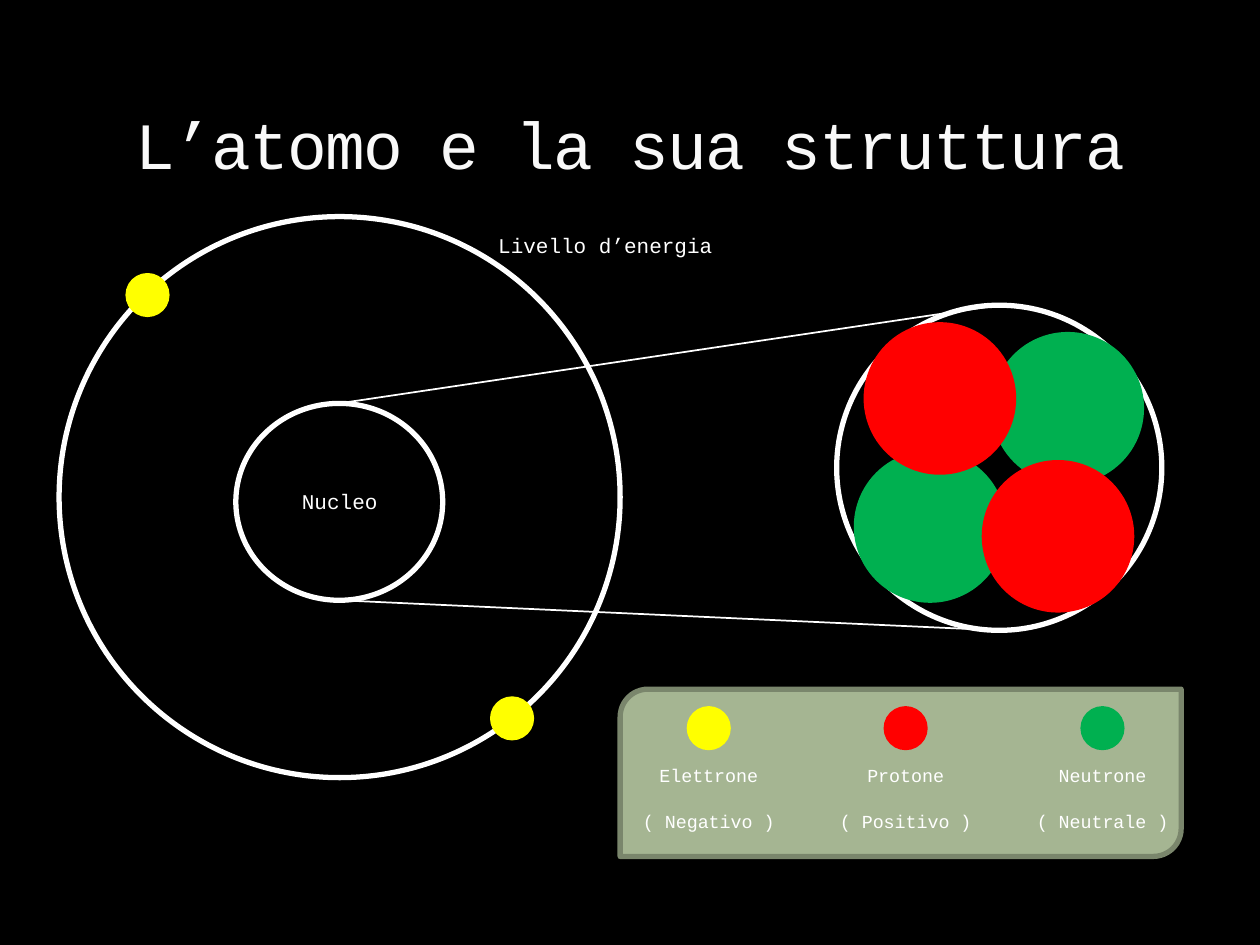
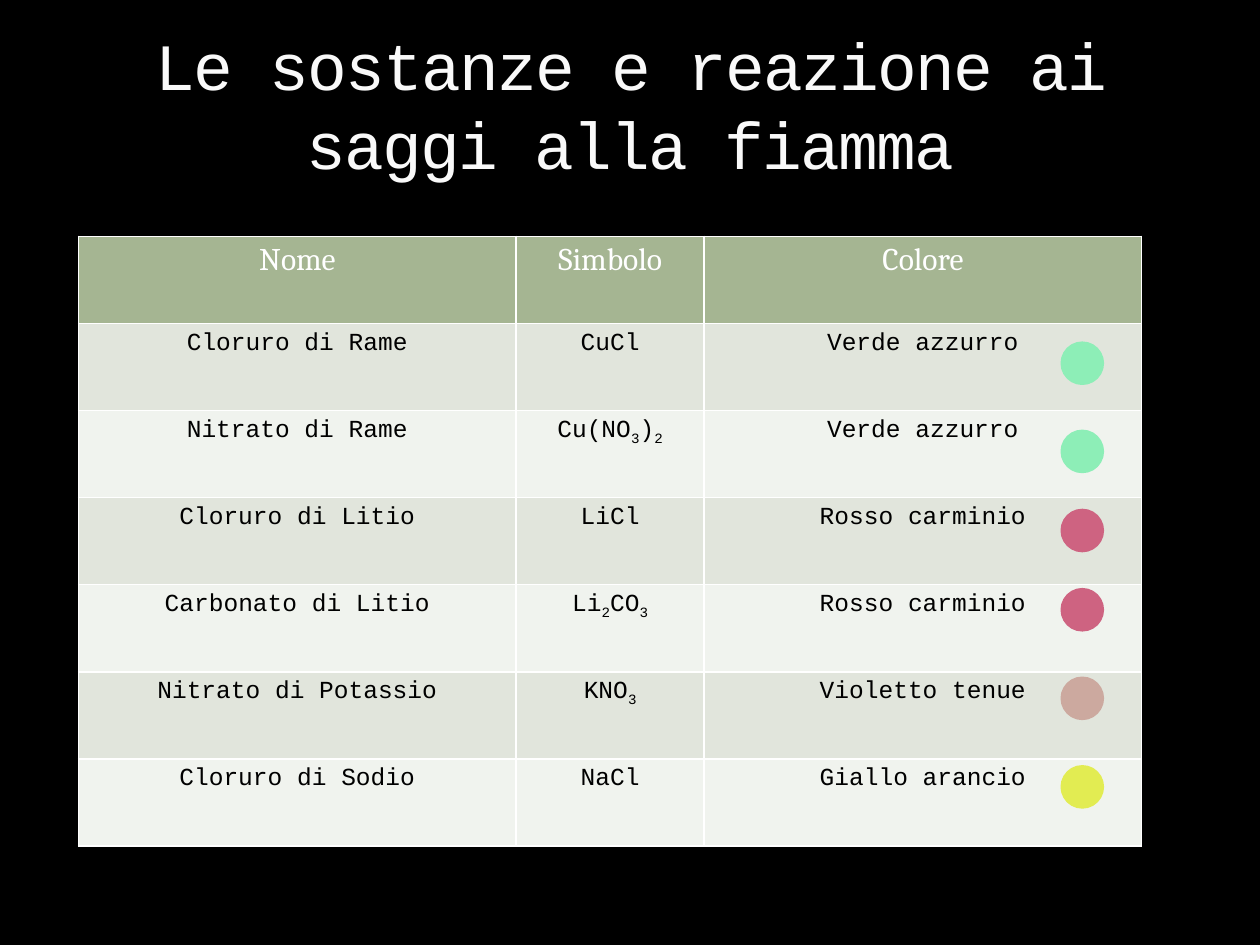
from itertools import groupby

from lxml import etree
from pptx import Presentation
from pptx.dml.color import RGBColor
from pptx.enum import shapes, text
from pptx.oxml import parse_xml
from pptx.oxml.ns import nsdecls, qn
from pptx.util import Pt

BLACK = RGBColor(0x00, 0x00, 0x00)
WHITE = RGBColor(0xFF, 0xFF, 0xFF)
TITLE_WHITE = RGBColor(0xF9, 0xF9, 0xF9)
TITLE_EDGE = RGBColor(0x3C, 0x44, 0x22)
YELLOW = RGBColor(0xFF, 0xFF, 0x00)
RED = RGBColor(0xFF, 0x00, 0x00)
GREEN = RGBColor(0x00, 0xB0, 0x50)
SAGE = RGBColor(0xA5, 0xB5, 0x92)
SAGE_EDGE = RGBColor(0x7A, 0x86, 0x6C)
ROW_DARK = RGBColor(0xE1, 0xE5, 0xDC)
ROW_LIGHT = RGBColor(0xF0, 0xF3, 0xEE)
AQUA = RGBColor(0x8D, 0xEE, 0xB7)
CARMINE = RGBColor(0xCE, 0x63, 0x81)
PALE_VIOLET = RGBColor(0xCC, 0xA9, 0x9F)
ORANGE_YELLOW = RGBColor(0xE2, 0xEC, 0x52)

MONO = "Courier New"
SERIF = "Cambria"

PARTICLE = 22.2
NUCLEON = 84.2


class SlideBuilder:
    """Holds the deck, its style and the slide being drawn."""

    def __init__(self):
        self.deck = Presentation()
        self.deck.slide_width, self.deck.slide_height = Pt(720), Pt(540)
        background = self.deck.slide_master.background.fill
        background.solid()
        background.fore_color.rgb = BLACK
        self.page = None

    def new_page(self, title):
        self.page = self.deck.slides.add_slide(self.deck.slide_layouts[5])
        box = self.page.shapes.title
        box.left, box.top, box.width, box.height = Pt(36), Pt(12.2), Pt(648), Pt(96)
        frame = box.text_frame
        frame.text = title
        frame.word_wrap = True
        frame.auto_size = text.MSO_AUTO_SIZE.NONE
        frame.vertical_anchor = text.MSO_ANCHOR.BOTTOM
        para = frame.paragraphs[0]
        self.style(para, 37.8, TITLE_WHITE)
        properties = para.runs[0]._r.get_or_add_rPr()
        properties.set("spc", "-100")
        properties.insert(0, parse_xml(
            f'<a:ln {nsdecls("a")} w="3175"><a:solidFill><a:srgbClr val="{TITLE_EDGE}">'
            '<a:alpha val="25000"/></a:srgbClr></a:solidFill></a:ln>'))

    def style(self, para, size, color, font=MONO):
        para.alignment = text.PP_ALIGN.CENTER
        para.font.name = font
        para.font.size = Pt(size)
        para.font.color.rgb = color

    def shape(self, kind, left, top, width, height, line, fill=None):
        item = self.page.shapes.add_shape(kind, Pt(left), Pt(top), Pt(width), Pt(height))
        item.shadow.inherit = False
        item.line.color.rgb = line
        item.line.width = Pt(3)
        if fill is None:
            item.fill.background()
        else:
            item.fill.solid()
            item.fill.fore_color.rgb = fill
        return item

    def ring(self, left, top, width, height):
        return self.shape(shapes.MSO_SHAPE.OVAL, left, top, width, height, WHITE)

    def ball(self, left, top, size, color):
        return self.shape(shapes.MSO_SHAPE.OVAL, left, top, size, size, color, color)

    def line(self, start_x, start_y, end_x, end_y):
        link = self.page.shapes.add_connector(
            shapes.MSO_CONNECTOR.STRAIGHT, start_x, start_y, end_x, end_y)
        link.line.color.rgb = WHITE
        link.line.width = Pt(1)
        etree.SubElement(link._element.spPr, qn("a:effectLst"))

    def label(self, lines, left, top, width, height, size=12, gap=0):
        box = self.page.shapes.add_textbox(Pt(left), Pt(top), Pt(width), Pt(height))
        frame = box.text_frame
        frame.word_wrap = True
        frame.text = "\n".join(lines)
        for index, para in enumerate(frame.paragraphs):
            self.style(para, size, WHITE)
            if index:
                para.space_before = Pt(gap)

    def table(self, rows, left, top, widths, row_height):
        frame = self.page.shapes.add_table(
            len(rows), len(widths), Pt(left), Pt(top),
            Pt(sum(widths)), Pt(row_height * len(rows)))
        grid = frame.table
        for column, width in zip(grid.columns, widths):
            column.width = Pt(width)
        for row_index, row in enumerate(rows):
            grid.rows[row_index].height = Pt(row_height)
            for column_index, value in enumerate(row):
                cell = grid.cell(row_index, column_index)
                para = cell.text_frame.paragraphs[0]
                self.add_formula(para, value)
                if row_index == 0:
                    self.style(para, 18, WHITE, SERIF)
                    color = SAGE
                else:
                    self.style(para, 14, BLACK)
                    color = ROW_DARK if row_index % 2 else ROW_LIGHT
                self.border(cell)
                cell.fill.solid()
                cell.fill.fore_color.rgb = color

    def add_formula(self, para, value):
        """Write the value with its digits as subscripts."""
        for is_digit, letters in groupby(value, str.isdigit):
            span = para.add_run()
            span.text = "".join(letters)
            if is_digit:
                span._r.get_or_add_rPr().set("baseline", "-25000")

    def border(self, cell):
        properties = cell._tc.get_or_add_tcPr()
        for side in "LRTB":
            properties.append(parse_xml(
                f'<a:ln{side} {nsdecls("a")} w="12700"><a:solidFill>'
                f'<a:srgbClr val="{WHITE}"/></a:solidFill></a:ln{side}>'))


def draw_atom(builder):
    builder.new_page("L’atomo e la sua struttura")
    nucleus = builder.ring(134.8, 230.5, 118.2, 112.5)
    builder.ring(33.8, 123.8, 320.6, 320.6)
    for left, top in ((281.5, 399.4), (73.2, 157.5)):
        builder.ball(left, top, PARTICLE, YELLOW)

    zoom_left, zoom_top, zoom_size = 478.1, 174.4, 185.8
    nucleus_x = nucleus.left + nucleus.width // 2
    zoom_x = Pt(zoom_left + zoom_size / 2)
    builder.line(nucleus_x, nucleus.top, zoom_x, Pt(zoom_top))
    builder.line(nucleus_x, nucleus.top + nucleus.height, zoom_x, Pt(zoom_top + zoom_size))
    builder.ring(zoom_left, zoom_top, zoom_size, zoom_size)
    for left, top, color in ((568.1, 191.2, GREEN), (489.4, 258.8, GREEN),
                             (495, 185.6, RED), (562.5, 264.4, RED)):
        builder.ball(left, top, NUCLEON, color)

    builder.label(["Nucleo"], 163.1, 275.6, 62, 21.8)
    builder.label(["Livello d’energia"], 275.6, 129.4, 140.6, 21.8)
    draw_legend(builder)


def draw_legend(builder):
    builder.shape(shapes.MSO_SHAPE.ROUND_2_DIAG_RECTANGLE,
                  354.4, 393.8, 320.6, 95.6, SAGE_EDGE, SAGE)
    particles = (("Elettrone", "( Negativo )", YELLOW),
                 ("Protone", "( Positivo )", RED),
                 ("Neutrone", "( Neutrale )", GREEN))
    width, pitch = 135, 112.5
    for index, (name, charge, color) in enumerate(particles):
        left = 337.5 + index * pitch
        builder.ball(left + (width - PARTICLE) / 2, 405, PARTICLE, color)
        builder.label([name, charge], left, 433.4, width, 45.4, size=10.5, gap=13.2)


def draw_flame_tests(builder):
    builder.new_page("Le sostanze e reazione ai saggi alla fiamma")
    substances = (
        ("Cloruro di Rame", "CuCl", "Verde azzurro", AQUA, 196.6),
        ("Nitrato di Rame", "Cu(NO3)2", "Verde azzurro", AQUA, 247),
        ("Cloruro di Litio", "LiCl", "Rosso carminio", CARMINE, 292.2),
        ("Carbonato di Litio", "Li2CO3", "Rosso carminio", CARMINE, 337.5),
        ("Nitrato di Potassio", "KNO3", "Violetto tenue", PALE_VIOLET, 388.1),
        ("Cloruro di Sodio", "NaCl", "Giallo arancio", ORANGE_YELLOW, 438.7),
    )
    rows = [("Nome", "Simbolo", "Colore")] + [substance[:3] for substance in substances]
    builder.table(rows, 44.9, 135, (250.1, 107.4, 250.1), 49.8)
    for *_, color, top in substances:
        builder.ball(607.5, top, 21.9, color)


def main():
    builder = SlideBuilder()
    draw_atom(builder)
    draw_flame_tests(builder)
    builder.deck.save("out.pptx")


if __name__ == "__main__":
    main()
